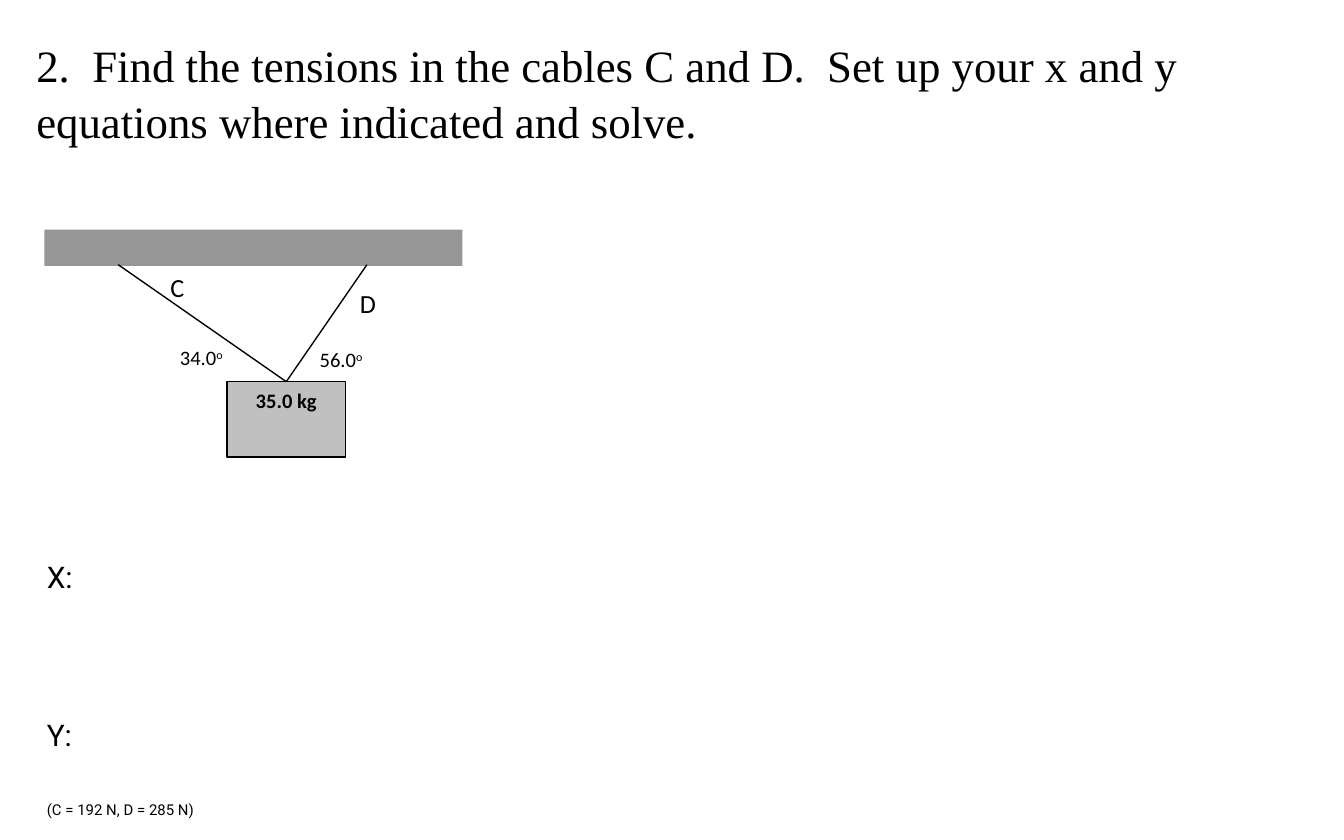
"""Build a physics problem slide about a load hanging from two cables."""
from typing import NamedTuple

from lxml import etree
from pptx import Presentation
from pptx.dml.color import RGBColor
from pptx.enum.shapes import MSO_CONNECTOR as Connector, MSO_SHAPE as Shape
from pptx.enum.text import MSO_ANCHOR as Anchor, PP_ALIGN as Align
from pptx.oxml.ns import qn
from pptx.util import Inches, Pt

BLACK = RGBColor(0x00, 0x00, 0x00)
CEILING_GRAY = RGBColor(0x96, 0x96, 0x96)
LOAD_GRAY = RGBColor(0xC0, 0xC0, 0xC0)
CEILING_BOTTOM = 1.97


class Label(NamedTuple):
    text: str
    left: float
    top: float
    width: float
    height: float
    size: float
    raised: str = ""


class Prompt(NamedTuple):
    text: str
    size: float
    space_before: float


LABELS = [
    Label("56.0", 2.28, 2.53, 0.61, 0.29, 11, "o"),
    Label("34.0", 1.24, 2.52, 0.61, 0.29, 11, "o"),
    Label("C", 1.17, 1.97, 0.4, 0.34, 14),
    Label("D", 2.58, 2.09, 0.4, 0.34, 14),
]
PROMPTS = [
    Prompt("X:", 16, 0),
    Prompt("Y:", 16, 65),
    Prompt("(C = 192 N, D = 285 N)", 8, 26),
]
CABLE_TOPS = [0.88, 2.73]


def add_span(para, text: str, *, size: float, font: str = "Calibri",
             bold: bool = False, raised: bool = False) -> None:
    span = para.add_run()
    span.text = text
    span.font.size = Pt(size)
    span.font.name = font
    span.font.bold = bold
    span.font.color.rgb = BLACK
    if raised:
        span.font._element.set("baseline", "30000")


def place(shape, left: float, top: float, width: float, height: float) -> None:
    shape.left, shape.top = Inches(left), Inches(top)
    shape.width, shape.height = Inches(width), Inches(height)


def add_block(page, left: float, top: float, width: float, height: float, fill: RGBColor):
    block = page.shapes.add_shape(
        Shape.RECTANGLE, Inches(left), Inches(top), Inches(width), Inches(height))
    block.shadow.inherit = False
    block.fill.solid()
    block.fill.fore_color.rgb = fill
    block.line.fill.background()
    return block


def add_cable(page, load, top_x: float) -> None:
    cable = page.shapes.add_connector(
        Connector.STRAIGHT, 0, 0, Inches(top_x), Inches(CEILING_BOTTOM))
    cable.begin_connect(load, 0)
    cable.line.color.rgb = BLACK
    cable.line.width = Pt(0.75)
    etree.SubElement(cable._element.spPr, qn("a:effectLst"))


def add_text_box(page, left: float, top: float, width: float, height: float, wrap: bool = True):
    box = page.shapes.add_textbox(Inches(left), Inches(top), Inches(width), Inches(height))
    box.text_frame.word_wrap = wrap
    return box.text_frame


def add_label(page, label: Label) -> None:
    para = add_text_box(page, label.left, label.top, label.width, label.height).paragraphs[0]
    add_span(para, label.text, size=label.size)
    if label.raised:
        add_span(para, label.raised, size=label.size, raised=True)


def add_prompts(page) -> None:
    frame = add_text_box(page, 0.25, 4.1, 1.36, 2.05, wrap=False)
    frame.vertical_anchor = Anchor.MIDDLE
    for index, prompt in enumerate(PROMPTS):
        para = frame.add_paragraph() if index else frame.paragraphs[0]
        if prompt.space_before:
            para.space_before = Pt(prompt.space_before)
        add_span(para, prompt.text, size=prompt.size, font="Roboto")


def add_title(page) -> None:
    title = page.shapes.title
    place(title, 0.17, 0.21, 9.67, 0.91)
    title.text_frame.vertical_anchor = Anchor.TOP
    para = title.text_frame.paragraphs[0]
    para.alignment = Align.LEFT
    para.line_spacing = 1.05
    add_span(para, "2.  Find the tensions in the cables C and D.  Set up your x and y "
             "equations where indicated and solve.", size=24, font="Times New Roman")


def add_diagram(page) -> None:
    add_block(page, 0.33, 1.71, 3.11, 0.27, CEILING_GRAY)
    load = add_block(page, 1.69, 2.84, 0.88, 0.56, LOAD_GRAY)
    load.line.color.rgb = BLACK
    load.line.width = Pt(0.75)
    load.text_frame.vertical_anchor = Anchor.TOP
    para = load.text_frame.paragraphs[0]
    para.alignment = Align.CENTER
    add_span(para, "35.0 kg", size=11, bold=True)
    for top_x in CABLE_TOPS:
        add_cable(page, load, top_x)
    for label in LABELS:
        add_label(page, label)


def main() -> None:
    deck = Presentation()
    deck.slide_width, deck.slide_height = Inches(10), Inches(6.25)
    page = deck.slides.add_slide(deck.slide_layouts.get_by_name("Title Only"))
    add_title(page)
    add_diagram(page)
    add_prompts(page)
    deck.save("out.pptx")


if __name__ == "__main__":
    main()
